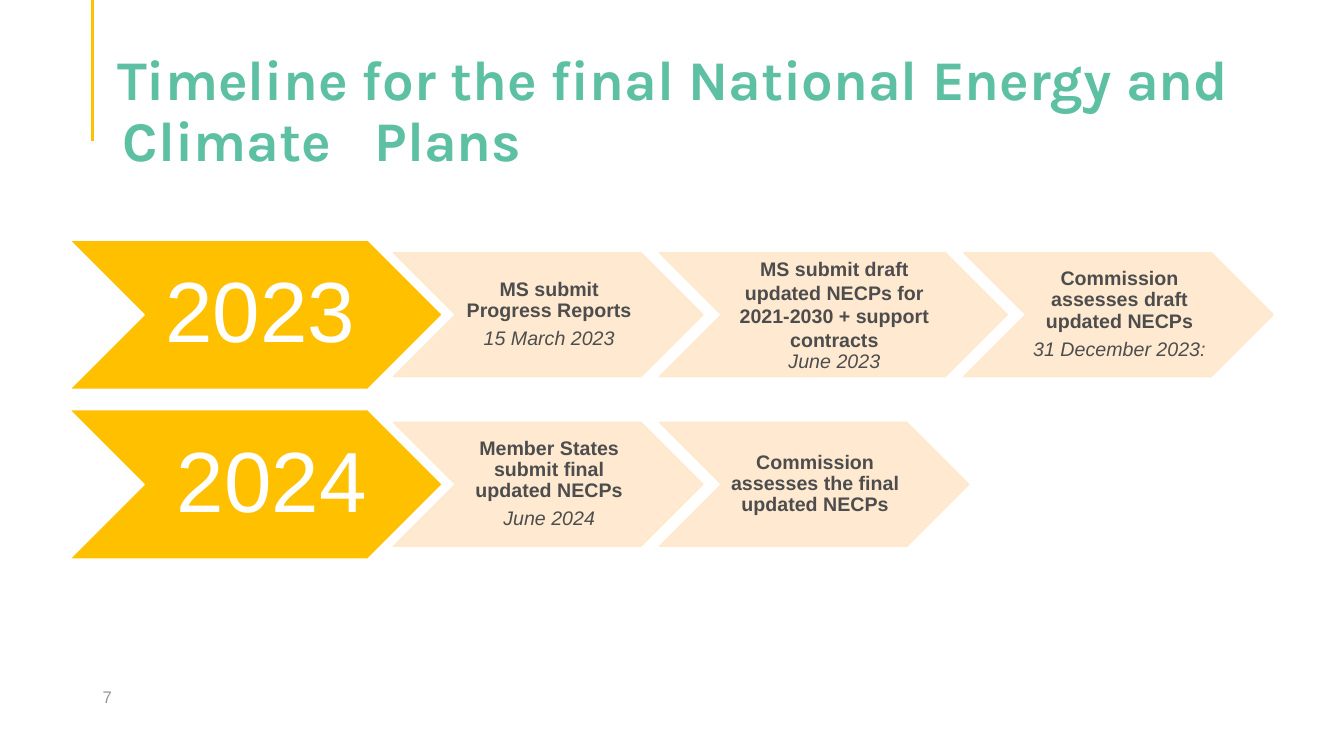
from lxml import etree
from pptx import Presentation
from pptx.dml.color import RGBColor
from pptx.enum.shapes import MSO_CONNECTOR, MSO_SHAPE
from pptx.enum.text import MSO_ANCHOR, PP_ALIGN
from pptx.oxml.ns import qn
from pptx.util import Pt

STRAIGHT = MSO_CONNECTOR.STRAIGHT
CHEVRON = MSO_SHAPE.CHEVRON
MIDDLE, BOTTOM = MSO_ANCHOR.MIDDLE, MSO_ANCHOR.BOTTOM
CENTER, LEFT = PP_ALIGN.CENTER, PP_ALIGN.LEFT

AMBER = RGBColor(0xFF, 0xC0, 0x00)
PEACH = RGBColor(0xFF, 0xE8, 0xCC)
WHITE = RGBColor(0xFF, 0xFF, 0xFF)
GREEN = RGBColor(0x5D, 0xC0, 0xA3)
DARK_GREY = RGBColor(0x4D, 0x4D, 0x4D)
PALE_GREY = RGBColor(0x97, 0x97, 0x97)

TITLE_FONT = {"name": "Karla", "size": Pt(40), "bold": True}
YEAR_FONT = {"name": "Arial", "size": Pt(61)}
ACTION_FONT = {"name": "Arial", "size": Pt(14), "bold": True}
DATE_FONT = {"name": "Arial", "size": Pt(14), "italic": True}
NUMBER_FONT = {"name": "Arial", "size": Pt(12)}

TIGHT = {"line_spacing": 0.9}
SPACED = {"line_spacing": 0.9, "space_after": Pt(5)}

YEAR_WIDTH, YEAR_HEIGHT = 266.4, 106.6
STEP_WIDTH, WIDE_STEP_WIDTH, STEP_HEIGHT = 221, 248.4, 88.5
YEAR_OVERLAP, STEP_OVERLAP = 35, 31
TIMELINE_LEFT, TIMELINE_TOP, ROW_PITCH = 49.7, 171.5, 121.2

# Each row: year, left inset of the year, steps.
# Each step: action, date, width, format of the action paragraph.
TIMELINE = [
    ("2023", 6, [
        ("MS submit Progress Reports", "15 March\u00a02023".replace("\u00a0", " "),
         STEP_WIDTH, SPACED),
        ("MS submit draft updated NECPs for 2021-2030 + support contracts",
         "June 2023", WIDE_STEP_WIDTH, {}),
        ("Commission assesses draft updated NECPs", "31 December 2023:",
         STEP_WIDTH, SPACED),
    ]),
    ("2024", 22, [
        ("Member States submit final updated NECPs", "June 2024", STEP_WIDTH, SPACED),
        ("Commission assesses the final updated NECPs", "", STEP_WIDTH, SPACED),
    ]),
]


def set_values(target, values):
    for name, value in values.items():
        setattr(target, name, value)


def add_text(slide, box, paragraphs, anchor, alignment, insets):
    """Add a text box; each paragraph is (text, font values, colour, paragraph values)."""
    frame = slide.shapes.add_textbox(*map(Pt, box)).text_frame
    sides = ("margin_left", "margin_top", "margin_right", "margin_bottom")
    set_values(frame, dict(zip(sides, map(Pt, insets))))
    set_values(frame, {"word_wrap": True, "vertical_anchor": anchor})
    for index, (text, font, colour, layout) in enumerate(paragraphs):
        paragraph = frame.add_paragraph() if index else frame.paragraphs[0]
        set_values(paragraph, {"alignment": alignment, **layout})
        run = paragraph.add_run()
        run.text = text
        set_values(run.font, font)
        run.font.color.rgb = colour
    return frame


def add_chevron(slide, box, fill, line, opacity=100):
    shape = slide.shapes.add_shape(CHEVRON, *map(Pt, box))
    shape.shadow.inherit = False
    shape.fill.solid()
    shape.fill.fore_color.rgb = fill
    shape.line.color.rgb = line
    shape.line.width = Pt(1)
    if opacity < 100:
        for colour in shape.element.spPr.iter(qn("a:srgbClr")):
            etree.SubElement(colour, qn("a:alpha"), val=str(opacity * 1000))


def chevron_text_box(left, top, width, height):
    """Return the part of a chevron between its notch and its point."""
    return left + height / 2, top, width - height, height


def add_year(slide, box, year, left_inset):
    add_chevron(slide, box, AMBER, WHITE)
    add_text(slide, chevron_text_box(*box), [(year, YEAR_FONT, WHITE, TIGHT)],
             MIDDLE, CENTER, (left_inset, 3, 0, 3))


def add_step(slide, box, action, date, action_layout):
    add_chevron(slide, box, PEACH, PEACH, opacity=90)
    paragraphs = [(action, ACTION_FONT, DARK_GREY, action_layout)]
    if date:
        paragraphs.append((date, DATE_FONT, DARK_GREY, SPACED))
    add_text(slide, chevron_text_box(*box), paragraphs, MIDDLE, CENTER, (1.4, 0.7, 0, 0.7))


def add_timeline_row(slide, left, top, year, year_inset, steps):
    add_year(slide, (left, top, YEAR_WIDTH, YEAR_HEIGHT), year, year_inset)
    step_left = left + YEAR_WIDTH - YEAR_OVERLAP
    step_top = top + (YEAR_HEIGHT - STEP_HEIGHT) / 2
    for action, date, width, action_layout in steps:
        add_step(slide, (step_left, step_top, width, STEP_HEIGHT), action, date, action_layout)
        step_left += width - STEP_OVERLAP


def add_title(slide, box):
    title = "Timeline for the final National Energy and Climate\tPlans"
    frame = add_text(slide, box, [(title, TITLE_FONT, GREEN, TIGHT)],
                     BOTTOM, LEFT, (7.2, 3.6, 7.2, 0))
    properties = frame.paragraphs[0]._p.get_or_add_pPr()
    properties.set("marL", str(Pt(14.4)))
    properties.set("indent", str(Pt(-4)))
    tabs = etree.SubElement(properties, qn("a:tabLst"))
    etree.SubElement(tabs, qn("a:tab"), pos=str(Pt(193)), algn="l")


def add_accent_line(slide, left, top, height):
    line = slide.shapes.add_connector(STRAIGHT, Pt(left), Pt(top), Pt(left), Pt(top + height))
    line.line.color.rgb = AMBER
    line.line.width = Pt(2.25)
    etree.SubElement(line.element.spPr, qn("a:effectLst"))


def main():
    presentation = Presentation()
    presentation.slide_width, presentation.slide_height = Pt(960), Pt(540)
    slide = presentation.slides.add_slide(presentation.slide_layouts[6])
    add_accent_line(slide, 66.2, 0, 100.8)
    for index, row in enumerate(TIMELINE):
        add_timeline_row(slide, TIMELINE_LEFT, TIMELINE_TOP + index * ROW_PITCH, *row)
    add_text(slide, (66.2, 483, 216, 28.8), [("7", NUMBER_FONT, PALE_GREY, {})],
             MIDDLE, LEFT, (7.2, 3.6, 7.2, 3.6))
    add_title(slide, (66.2, 62, 828, 62))
    presentation.save("out.pptx")


if __name__ == "__main__":
    main()
